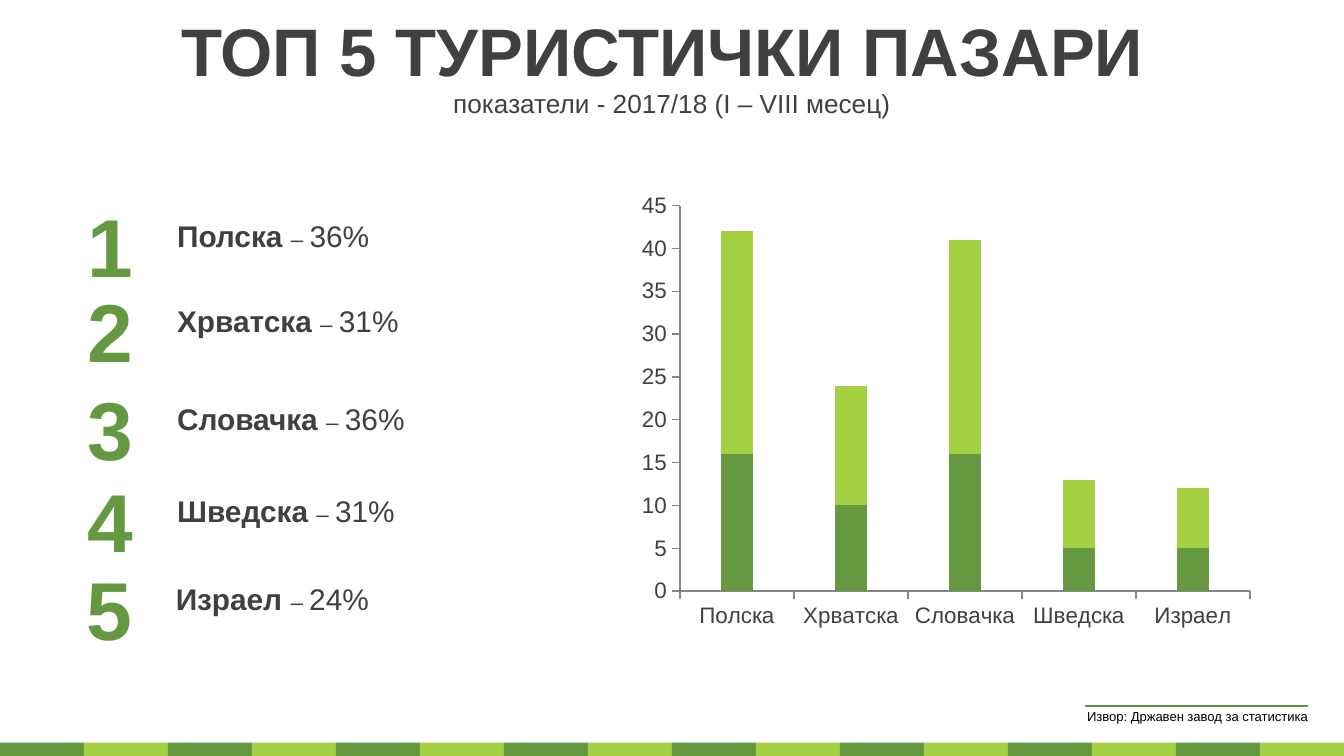
from dataclasses import dataclass

from lxml.etree import SubElement
from pptx import Presentation
from pptx.chart.data import CategoryChartData
from pptx.dml.color import RGBColor
from pptx.enum.chart import XL_CHART_TYPE, XL_TICK_MARK
from pptx.enum.shapes import MSO_CONNECTOR, MSO_SHAPE
from pptx.enum.text import MSO_ANCHOR, PP_ALIGN
from pptx.oxml.ns import qn
from pptx.util import Inches, Pt


@dataclass(frozen=True)
class Theme:
    font: str = "Arial"
    dark_green: RGBColor = RGBColor(0x64, 0x99, 0x41)
    light_green: RGBColor = RGBColor(0xA4, 0xD1, 0x44)
    rule_green: RGBColor = RGBColor(0x61, 0x98, 0x3D)
    text: RGBColor = RGBColor(0x40, 0x40, 0x40)
    axis: RGBColor = RGBColor(0x86, 0x86, 0x86)
    black: RGBColor = RGBColor(0, 0, 0)
    title_size: int = 36
    subtitle_size: int = 14
    number_size: int = 44
    market_size: int = 16
    small_size: int = 12
    source_size: int = 7


@dataclass(frozen=True)
class Run:
    text: str
    size: int
    color: RGBColor
    bold: bool = False


@dataclass(frozen=True)
class Market:
    name: str
    growth: str
    left: float
    top: float
    first_value: int
    second_value: int


THEME = Theme()
SLIDE_WIDTH = 10
SLIDE_HEIGHT = SLIDE_WIDTH * 9 / 16
STRIPE_COUNT = 16
STRIPE_HEIGHT = 0.1
CHART_WIDTH, CHART_HEIGHT = 4.8, 4.02
MARKETS = [
    Market("Полска", "36%", 0.21, 1.4, 16, 26),
    Market("Хрватска", "31%", 0.21, 2.03, 10, 14),
    Market("Словачка", "36%", 0.21, 2.76, 16, 25),
    Market("Шведска", "31%", 0.21, 3.45, 5, 8),
    Market("Израел", "24%", 0.2, 4.1, 5, 7),
]


def add_text(slide, left: float, top: float, width: float, height: float,
             runs: list[Run], align=PP_ALIGN.LEFT, anchor=MSO_ANCHOR.TOP,
             wrap: bool = True) -> None:
    box = slide.shapes.add_textbox(Inches(left), Inches(top), Inches(width), Inches(height))
    frame = box.text_frame
    frame.word_wrap = wrap
    frame.vertical_anchor = anchor
    paragraph = frame.paragraphs[0]
    paragraph.alignment = align
    for part in runs:
        run = paragraph.add_run()
        run.text = part.text
        run.font.name = THEME.font
        run.font.size = Pt(part.size)
        run.font.bold = part.bold
        run.font.color.rgb = part.color


def add_stripes(slide) -> None:
    width = SLIDE_WIDTH / STRIPE_COUNT
    for index in range(STRIPE_COUNT):
        stripe = slide.shapes.add_shape(
            MSO_SHAPE.RECTANGLE, Inches(index * width), Inches(SLIDE_HEIGHT - STRIPE_HEIGHT),
            Inches(width), Inches(STRIPE_HEIGHT))
        stripe.shadow.inherit = False
        stripe.fill.solid()
        stripe.fill.fore_color.rgb = THEME.light_green if index % 2 else THEME.dark_green
        stripe.line.fill.background()


def add_market(slide, number: int, market: Market) -> None:
    add_text(slide, market.left, market.top, 1.22, 0.84,
             [Run(str(number), THEME.number_size, THEME.dark_green, True)],
             PP_ALIGN.CENTER, MSO_ANCHOR.MIDDLE)
    add_text(slide, market.left + 1.01, market.top + 0.17, 3.86, 0.37,
             [Run(f"{market.name} ", THEME.market_size, THEME.text, True),
              Run("– ", THEME.small_size, THEME.text),
              Run(market.growth, THEME.market_size, THEME.text)])


def set_plot_layout(chart, left: float, top: float, width: float, height: float) -> None:
    plot_area = chart.plots[0]._element.getparent()
    layout = plot_area.find(qn("c:layout"))
    if layout is None:
        layout = SubElement(plot_area, qn("c:layout"))
        plot_area.insert(0, layout)
    manual = SubElement(layout, qn("c:manualLayout"))
    settings = {"layoutTarget": "inner", "xMode": "edge", "yMode": "edge",
                "x": left / CHART_WIDTH, "y": top / CHART_HEIGHT,
                "w": width / CHART_WIDTH, "h": height / CHART_HEIGHT}
    for name, value in settings.items():
        SubElement(manual, qn(f"c:{name}")).set("val", str(value))


def add_market_chart(slide) -> None:
    data = CategoryChartData()
    data.categories = [market.name for market in MARKETS]
    data.add_series("Series 1", [market.first_value for market in MARKETS])
    data.add_series("Series 2", [market.second_value for market in MARKETS])
    chart = slide.shapes.add_chart(
        XL_CHART_TYPE.COLUMN_STACKED, Inches(4.61), Inches(1.32),
        Inches(CHART_WIDTH), Inches(CHART_HEIGHT), data).chart
    chart.has_legend = False
    chart.has_title = False
    chart.font.name = THEME.font
    chart.font.size = Pt(THEME.small_size)
    chart.font.color.rgb = THEME.text

    plot = chart.plots[0]
    plot.gap_width = 250
    plot.overlap = 100
    plot.vary_by_categories = False
    for series, color in zip(plot.series, (THEME.dark_green, THEME.light_green)):
        series.format.fill.solid()
        series.format.fill.fore_color.rgb = color

    for axis in (chart.category_axis, chart.value_axis):
        axis.has_major_gridlines = False
        axis.major_tick_mark = XL_TICK_MARK.OUTSIDE
        axis.minor_tick_mark = XL_TICK_MARK.NONE
        axis.format.line.color.rgb = THEME.axis
        axis.format.line.width = Pt(0.75)
    chart.value_axis.minimum_scale = 0
    chart.value_axis.maximum_scale = 45
    chart.value_axis.major_unit = 5
    set_plot_layout(chart, 0.45, 0.21, 4.24, 2.87)


def add_source(slide) -> None:
    add_text(slide, 7.99, 5.22, 1.88, 0.22,
             [Run("Извор: Државен завод за статистика", THEME.source_size, THEME.black)],
             wrap=False)
    rule = slide.shapes.add_connector(
        MSO_CONNECTOR.STRAIGHT, Inches(8.07), Inches(5.25), Inches(9.73), Inches(5.25))
    rule.line.color.rgb = THEME.rule_green
    rule.line.width = Pt(1)
    SubElement(rule._element.spPr, qn("a:effectLst"))


def main() -> None:
    presentation = Presentation()
    presentation.slide_width = Inches(SLIDE_WIDTH)
    presentation.slide_height = Inches(SLIDE_HEIGHT)
    slide = presentation.slides.add_slide(presentation.slide_layouts[6])

    # Footer band
    add_stripes(slide)

    # Heading
    add_text(slide, 0, -0.1, SLIDE_WIDTH, 0.94,
             [Run("ТОП 5 ТУРИСТИЧКИ ПАЗАРИ ", THEME.title_size, THEME.text, True)],
             PP_ALIGN.CENTER, MSO_ANCHOR.MIDDLE)
    add_text(slide, 0, 0.61, SLIDE_WIDTH, 0.31,
             [Run("показатели - 2017/18 (I – VIII месец)", THEME.subtitle_size, THEME.text)],
             PP_ALIGN.CENTER, MSO_ANCHOR.MIDDLE)

    # Chart and ranked markets
    add_market_chart(slide)
    for number, market in enumerate(MARKETS, start=1):
        add_market(slide, number, market)

    # Data source
    add_source(slide)
    presentation.save("out.pptx")


if __name__ == "__main__":
    main()
